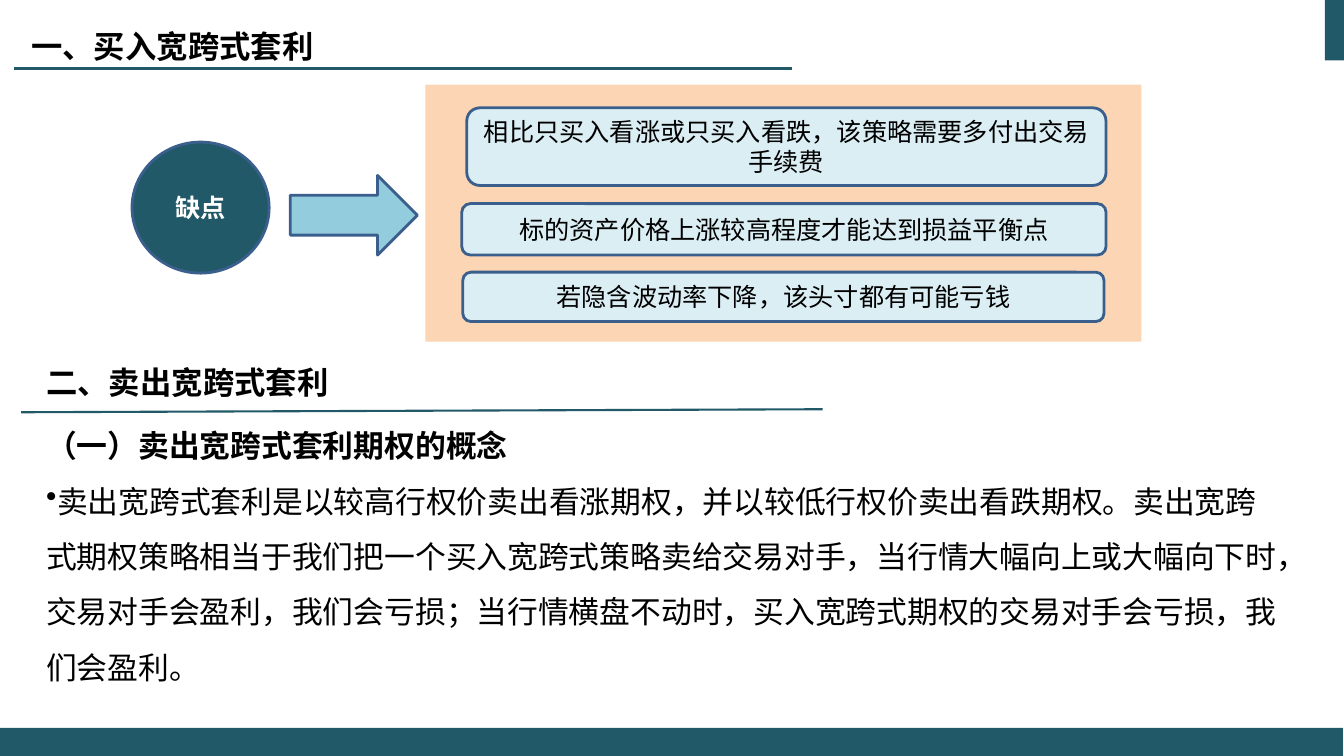
from lxml import etree
from pptx import Presentation
from pptx.dml.color import RGBColor
from pptx.enum.shapes import MSO_CONNECTOR, MSO_SHAPE
from pptx.enum.text import MSO_ANCHOR, MSO_AUTO_SIZE, PP_ALIGN
from pptx.oxml.ns import qn
from pptx.util import Inches, Pt

RECT, OVAL = MSO_SHAPE.RECTANGLE, MSO_SHAPE.OVAL
ROUNDED, ARROW = MSO_SHAPE.ROUNDED_RECTANGLE, MSO_SHAPE.RIGHT_ARROW
MIDDLE, NO_FIT = MSO_ANCHOR.MIDDLE, MSO_AUTO_SIZE.NONE
LEFT, CENTER = PP_ALIGN.LEFT, PP_ALIGN.CENTER

COLORS = {
    "teal": "215968", "peach": "FCD5B5", "pale": "DBEEF4", "sky": "93CDDD",
    "outline": "3A5F8C", "black": "000000", "white": "FFFFFF",
}


def color(name):
    return RGBColor.from_string(COLORS[name])


def write(para, text, align, ink, **formats):
    para.alignment = align
    span = para.add_run()
    span.text = text
    for key, value in formats.items():
        setattr(span.font, key, value)
    span.font.color.rgb = color(ink)
    return span


deck = Presentation()
deck.slide_width, deck.slide_height = Inches(13.33), Inches(7.5)
page = deck.slides.add_slide(deck.slide_layouts[5])

# Shapes: page edges, panel, circle, arrow and the three drawbacks
shapes = [
    (RECT, (13.14, 0, 0.2, 0.6), "teal", None, ""),
    (RECT, (0, 7.22, 13.32, 0.28), "teal", None, ""),
    (RECT, (4.22, 0.84, 7.1, 2.55), "peach", None, ""),
    (OVAL, (1.31, 1.41, 1.36, 1.3), "teal", "outline", "缺点"),
    (ARROW, (2.88, 1.74, 1.26, 0.79), "sky", "outline", ""),
    (ROUNDED, (4.63, 1.07, 6.34, 0.77), "pale", "outline",
     "相比只买入看涨或只买入看跌，该策略需要多付出交易手续费"),
    (ROUNDED, (4.58, 2.02, 6.39, 0.51), "pale", "outline",
     "标的资产价格上涨较高程度才能达到损益平衡点"),
    (ROUNDED, (4.59, 2.7, 6.36, 0.49), "pale", "outline",
     "若隐含波动率下降，该头寸都有可能亏钱"),
]
for kind, place, fill, outline, text in shapes:
    shape = page.shapes.add_shape(kind, *map(Inches, place))
    shape.shadow.inherit = False
    shape.fill.solid()
    shape.fill.fore_color.rgb = color(fill)
    if outline:
        shape.line.color.rgb = color(outline)
        shape.line.width = Pt(2)
    else:
        shape.line.fill.background()
    if text:
        frame = shape.text_frame
        frame.word_wrap = True
        frame.vertical_anchor = MIDDLE
        on_circle = kind == OVAL
        write(frame.paragraphs[0], text, CENTER, "white" if on_circle else "black",
              name="Calibri", size=Pt(18), bold=on_circle)

# Rules under the headings
for ends in [(7.86, 0.68, 0.14, 0.68), (0.21, 4.09, 8.16, 4.06)]:
    rule = page.shapes.add_connector(MSO_CONNECTOR.STRAIGHT, *map(Inches, ends))
    rule.line.color.rgb = color("teal")
    rule.line.width = Pt(1.5)
    etree.SubElement(rule._element.spPr, qn("a:effectLst"))

# Headings
title = page.shapes.title
title.left, title.top, title.width, title.height = map(Inches, (0.21, -0.04, 10.88, 0.93))
subtitle = page.shapes.add_textbox(*map(Inches, (0.36, 3.29, 10.88, 0.93)))
for heading, text in [(title, "一、买入宽跨式套利"), (subtitle, "二、卖出宽跨式套利")]:
    frame = heading.text_frame
    frame.word_wrap = True
    frame.auto_size = NO_FIT
    frame.vertical_anchor = MIDDLE
    span = write(frame.paragraphs[0], text, LEFT, "black",
                 name="Noto Sans CJK SC", size=Pt(28), bold=True)
    span.font._element.set("cap", "small")

# Concept text
body = page.shapes.add_textbox(*map(Inches, (0.36, 4.05, 12.48, 2.75)))
frame = body.text_frame
frame.word_wrap = True
frame.vertical_anchor = MIDDLE
concept, detail = frame.paragraphs[0], frame.add_paragraph()
bullet = etree.SubElement(detail._p.get_or_add_pPr(), qn("a:buChar"))
bullet.set("char", "•")
for para, text, bold in [
    (concept, "（一）卖出宽跨式套利期权的概念", True),
    (detail, "卖出宽跨式套利是以较高行权价卖出看涨期权，并以较低行权价卖出看跌期权。"
             "卖出宽跨式期权策略相当于我们把一个买入宽跨式策略卖给交易对手，"
             "当行情大幅向上或大幅向下时，交易对手会盈利，我们会亏损；"
             "当行情横盘不动时，买入宽跨式期权的交易对手会亏损，我们会盈利。", False),
]:
    para.line_spacing = 1.5
    write(para, text, LEFT, "black", name="Calibri", size=Pt(22), bold=bold)

deck.save("out.pptx")
